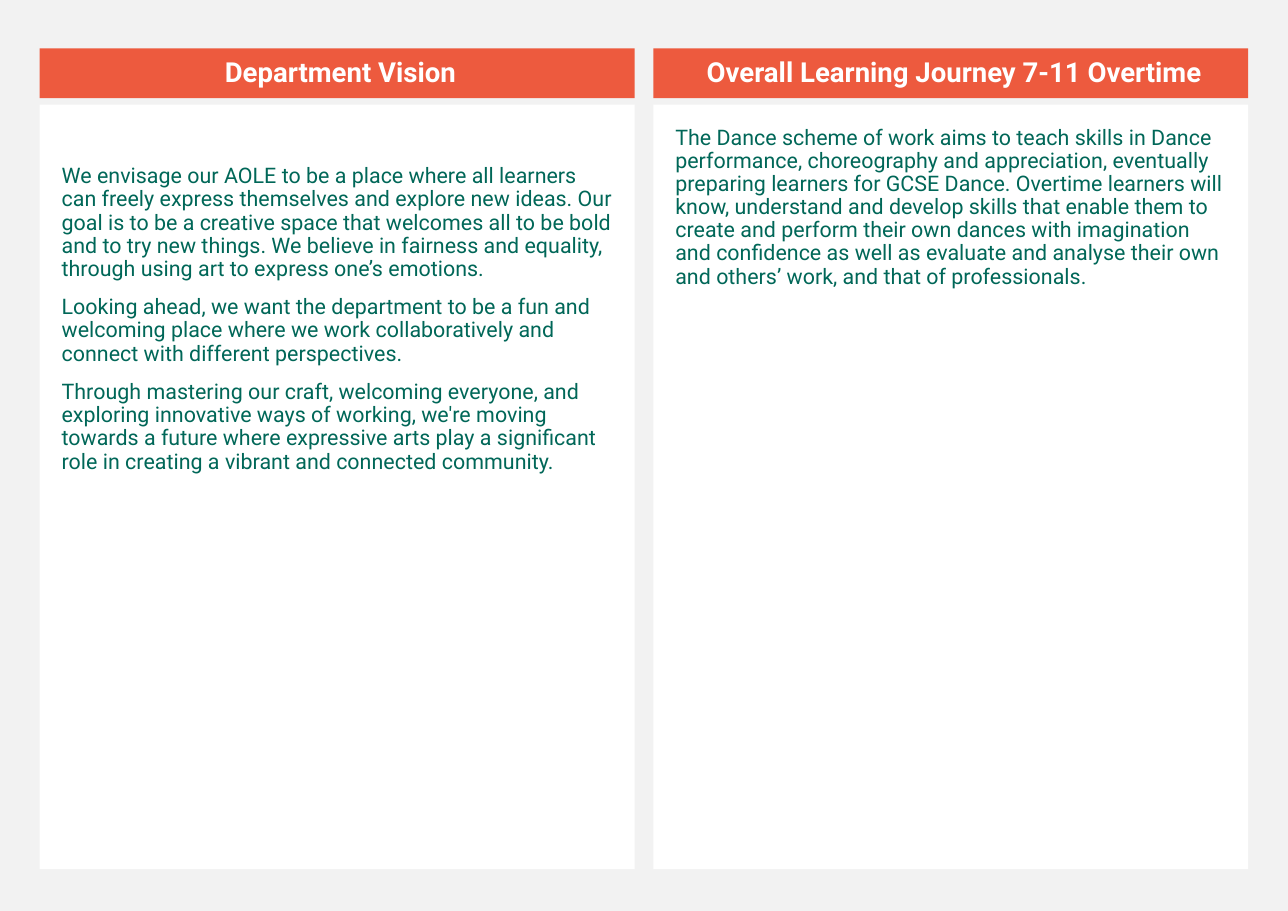
from pptx import Presentation
from pptx.dml.color import RGBColor
from pptx.enum.shapes import MSO_SHAPE
from pptx.enum.text import MSO_ANCHOR, PP_ALIGN
from pptx.util import Inches, Pt

COLOURS = {"page": "F2F2F2", "heading": "ED5A3E", "panel": "FFFFFF",
           "heading_text": "FFFFFF", "body_text": "006758"}

COLUMNS = [
    {"heading": "Department Vision", "top_inset": 0.55, "body": [
        "We envisage our AOLE to be a place where all learners can freely express themselves and "
        "explore new ideas. Our goal is to be a creative space that welcomes all to be bold and to "
        "try new things. We believe in fairness and equality, through using art to express one’s "
        "emotions.",
        "Looking ahead, we want the department to be a fun and welcoming place where we work "
        "collaboratively and connect with different perspectives.",
        "Through mastering our craft, welcoming everyone, and exploring innovative ways of working, "
        "we're moving towards a future where expressive arts play a significant role in creating a "
        "vibrant and connected community."]},
    {"heading": "Overall Learning Journey 7-11 Overtime", "top_inset": 0.2, "body": [
        "The Dance scheme of work aims to teach skills in Dance performance, choreography and "
        "appreciation, eventually preparing learners for GCSE Dance. Overtime learners will know, "
        "understand and develop skills that enable them to create and perform their own dances with "
        "imagination and confidence as well as evaluate and analyse their own and others’ work, and "
        "that of professionals."]},
]

LEFT, COLUMN_WIDTH, COLUMN_STEP = 0.36, 5.4, 5.57
HEADING = {"top": 0.44, "height": 0.45, "fill": "heading", "colour": "heading_text",
           "anchor": MSO_ANCHOR.MIDDLE, "align": PP_ALIGN.CENTER,
           "font": {"name": "Roboto", "size": Pt(18), "bold": True}}
BODY = {"top": 0.95, "height": 6.94, "fill": "panel", "colour": "body_text",
        "anchor": MSO_ANCHOR.TOP, "align": PP_ALIGN.LEFT,
        "font": {"name": "Roboto", "size": Pt(14), "bold": False}}
HEADING_INSETS = (0.16, 0.05, 0.1, 0.05)


def set_all(target, values):
    """Set every attribute in values on the target."""
    for attribute, value in values.items():
        setattr(target, attribute, value)


def add_block(slide, left, style, insets, paragraphs):
    """Draw one filled block with its paragraphs."""
    block = slide.shapes.add_shape(
        MSO_SHAPE.RECTANGLE, Inches(left), Inches(style["top"]),
        Inches(COLUMN_WIDTH), Inches(style["height"]))
    block.shadow.inherit = False
    block.fill.solid()
    block.fill.fore_color.rgb = RGBColor.from_string(COLOURS[style["fill"]])
    block.line.fill.background()
    frame = block.text_frame
    sides = ("margin_left", "margin_top", "margin_right", "margin_bottom")
    set_all(frame, dict(zip(sides, map(Inches, insets))))
    set_all(frame, {"word_wrap": True, "vertical_anchor": style["anchor"]})
    for index, text in enumerate(paragraphs):
        paragraph = frame.add_paragraph() if index else frame.paragraphs[0]
        set_all(paragraph, {"alignment": style["align"], "line_spacing": 0.9,
                            "space_before": Pt(10)})
        run = paragraph.add_run()
        run.text = text
        set_all(run.font, style["font"])
        run.font.color.rgb = RGBColor.from_string(COLOURS[style["colour"]])


def main():
    """Build the two-column slide."""
    deck = Presentation()
    set_all(deck, {"slide_width": Inches(11.69), "slide_height": Inches(8.27)})
    slide = deck.slides.add_slide(deck.slide_layouts[6])
    slide.background.fill.solid()
    slide.background.fill.fore_color.rgb = RGBColor.from_string(COLOURS["page"])
    for index, column in enumerate(COLUMNS):
        left = LEFT + index * COLUMN_STEP
        add_block(slide, left, HEADING, HEADING_INSETS, [column["heading"]])
        add_block(slide, left, BODY, (0.2, column["top_inset"], 0.2, 0.2), column["body"])
    deck.save("out.pptx")


if __name__ == "__main__":
    main()
